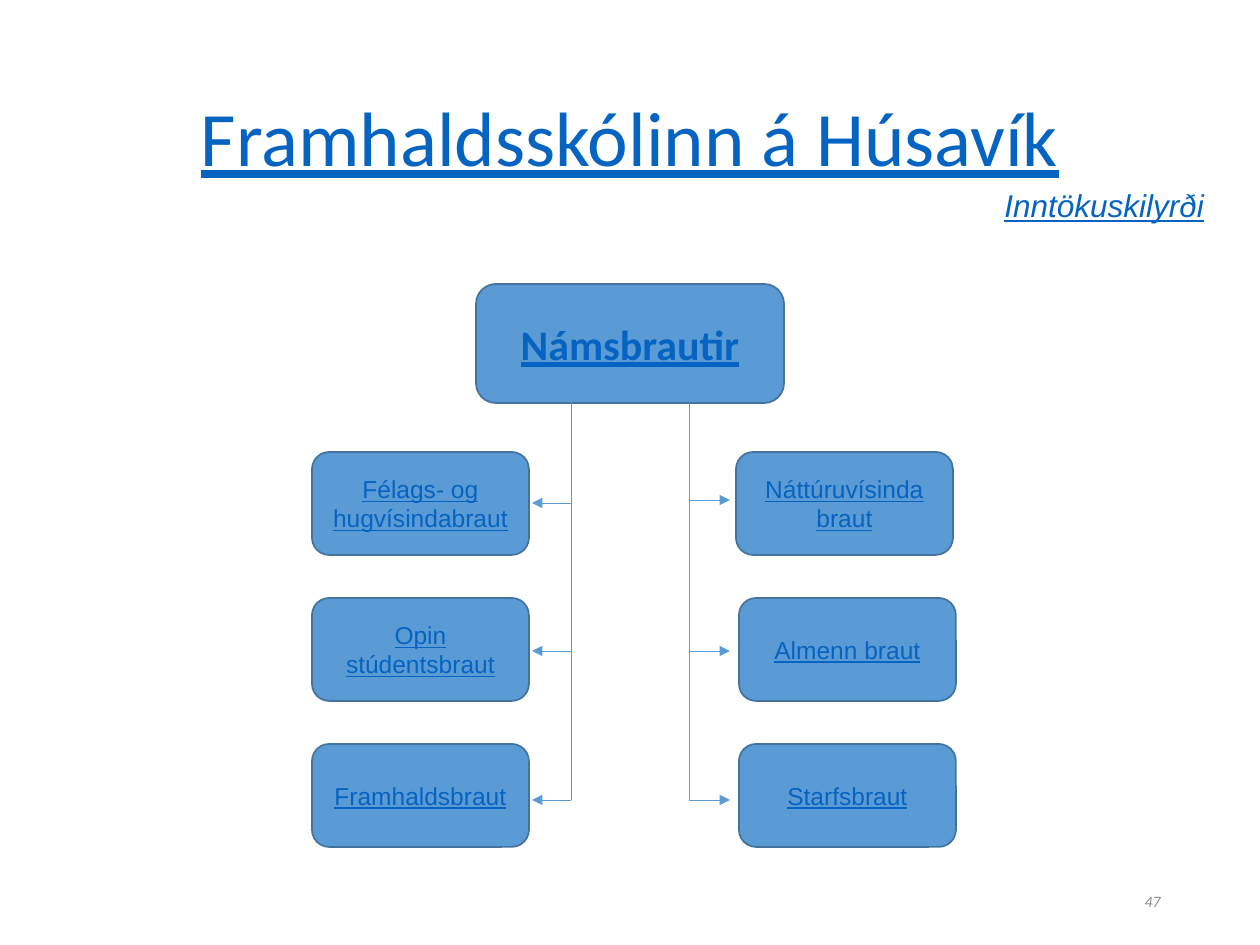
from lxml.etree import SubElement
from pptx import Presentation
from pptx.dml.color import RGBColor
from pptx.enum.shapes import MSO_CONNECTOR as CONN, MSO_SHAPE as SHAPE
from pptx.enum.text import MSO_ANCHOR as ANCHOR, MSO_AUTO_SIZE as AUTO, PP_ALIGN as ALIGN
from pptx.oxml.ns import qn
from pptx.util import Emu, Pt

COLORS = {"link": "0563C1", "box": "5B9BD5", "edge": "43739E", "number": "8C8C8C"}
PX_PER_INCH = 126


def px(n):
    return Emu(round(n * 914400 / PX_PER_INCH))


def color(name):
    return RGBColor.from_string(COLORS[name])


def write(tf, text, size, font="Arial", ink="link", align=ALIGN.CENTER,
          anchor=ANCHOR.MIDDLE, bold=False, italic=False, underline=True, spacing=None):
    tf.word_wrap = True
    tf.auto_size = AUTO.NONE
    tf.vertical_anchor = anchor
    p = tf.paragraphs[0]
    p.alignment = align
    p.line_spacing = spacing
    r = p.add_run()
    r.text = text
    f = r.font
    f.name, f.size, f.color.rgb = font, Pt(size), color(ink)
    f.bold, f.italic, f.underline = bold, italic, underline


class Chart:
    """Draws the elements of a branching diagram on one slide."""

    def __init__(self, slide):
        self.slide = slide
        self.shapes = slide.shapes

    def title(self, text, x, y, w, h, **fmt):
        sp = self.shapes.title
        sp.left, sp.top, sp.width, sp.height = map(px, (x, y, w, h))
        write(sp.text_frame, text, **fmt)

    def label(self, text, x, y, w, h, **fmt):
        sp = self.shapes.add_textbox(*map(px, (x, y, w, h)))
        write(sp.text_frame, text, **fmt)

    def box(self, text, x, y, w, h, **fmt):
        sp = self.shapes.add_shape(SHAPE.ROUNDED_RECTANGLE, *map(px, (x, y, w, h)))
        sp.shadow.inherit = False
        sp.fill.solid()
        sp.fill.fore_color.rgb = color("box")
        sp.line.color.rgb = color("edge")
        sp.line.width = Pt(1)
        write(sp.text_frame, text, **fmt)

    def line(self, x1, y1, x2, y2, arrow=False):
        cxn = self.shapes.add_connector(CONN.STRAIGHT, *map(px, (x1, y1, x2, y2)))
        cxn.line.color.rgb = color("box")
        cxn.line.width = Pt(0.5)
        if arrow:
            SubElement(cxn.line._get_or_add_ln(), qn("a:tailEnd"), type="triangle")
        SubElement(cxn._element.spPr, qn("a:effectLst"))


def main():
    prs = Presentation()
    prs.slide_width, prs.slide_height = px(1260), px(945)
    chart = Chart(prs.slides.add_slide(prs.slide_layouts[5]))

    chart.title("Framhaldsskólinn á Húsavík", 87, 50, 1086, 183,
                size=44, font="Calibri", spacing=0.9)
    chart.label("47", 890, 876, 283, 50, size=9, font="Calibri", ink="number",
                align=ALIGN.RIGHT, italic=True, underline=False)
    chart.label("Inntökuskilyrði", 992, 180, 268, 50, size=18,
                align=ALIGN.LEFT, anchor=ANCHOR.TOP, italic=True)
    chart.box("Námsbrautir", 476, 284, 308, 119, size=24, font="Calibri", bold=True)

    # Each side: trunk x, arrow tip x, then (name, box left, arrow y) from the top down
    sides = [
        (571, 532, [("Félags- og hugvísindabraut", 312, 503),
                    ("Opin stúdentsbraut", 312, 651),
                    ("Framhaldsbraut", 312, 800)]),
        (689, 730, [("Náttúruvísinda braut", 736, 500),
                    ("Almenn braut", 739, 651),
                    ("Starfsbraut", 739, 800)]),
    ]
    first_top, pitch, trunk_top, trunk_end = 452, 146, 403, 800
    for trunk, tip, programmes in sides:
        for i, (name, left, arrow_y) in enumerate(programmes):
            chart.box(name, left, first_top + i * pitch, 217, 103, size=14)
            chart.line(trunk, arrow_y, tip, arrow_y, arrow=True)
        chart.line(trunk, trunk_top, trunk, trunk_end)

    prs.save("out.pptx")


if __name__ == "__main__":
    main()
